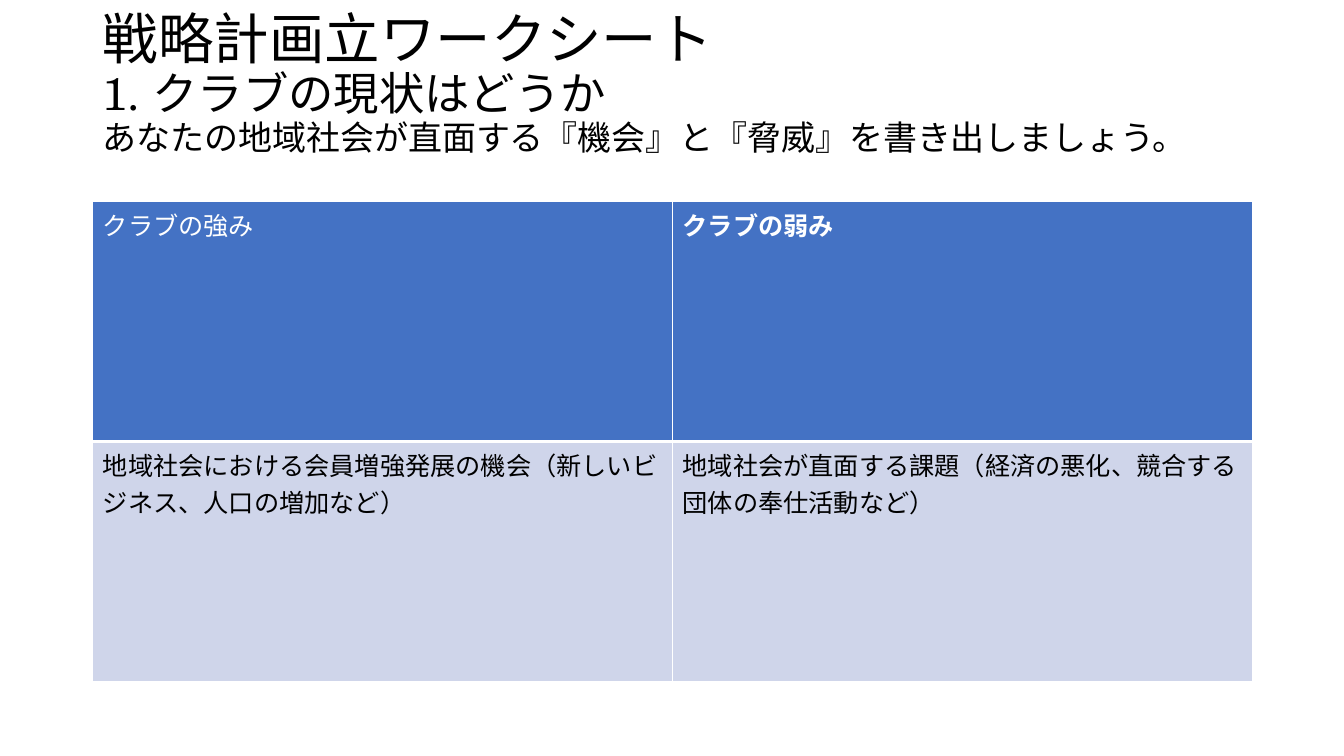
import dataclasses

import lxml.etree
import pptx
import pptx.dml.color
import pptx.enum.text
import pptx.oxml.ns
import pptx.util

COLORS = {"black": "000000", "white": "FFFFFF", "header": "4472C4", "body": "CFD5EA"}
JAPANESE = "Noto Sans CJK JP"
JAPANESE_BOLD = "Noto Sans CJK SC"
SERIF = "TeX Gyre Schola"
Inches = pptx.util.Inches


@dataclasses.dataclass(frozen=True)
class TextRun:
    text: str
    size: float
    font: str = JAPANESE


@dataclasses.dataclass(frozen=True)
class WorksheetCell:
    text: str
    fill: str
    color: str
    font: str = JAPANESE
    bold: bool = False


TITLE_LINES = [
    [TextRun("戦略計画立ワークシート", 39.6)],
    [TextRun("1. ", 32.4, SERIF), TextRun("クラブの現状はどうか", 32.4)],
    [TextRun("あなたの地域社会が直面する『機会』と『脅威』を書き出しましょう。", 24.3)],
]
WORKSHEET = [
    [
        WorksheetCell("クラブの強み", "header", "white"),
        WorksheetCell("クラブの弱み", "header", "white", JAPANESE_BOLD, True),
    ],
    [
        WorksheetCell("地域社会における会員増強発展の機会（新しいビジネス、人口の増加など）", "body", "black"),
        WorksheetCell("地域社会が直面する課題（経済の悪化、競合する団体の奉仕活動など）", "body", "black"),
    ],
]


def add_text(paragraph, text: str, *, size: float, font: str, color: str, bold: bool = False) -> None:
    run = paragraph.add_run()
    run.text = text
    run.font.size = pptx.util.Pt(size)
    run.font.bold = bold
    run.font.color.rgb = pptx.dml.color.RGBColor.from_string(COLORS[color])
    run.font.name = font
    east_asian = lxml.etree.SubElement(run.font._element, pptx.oxml.ns.qn("a:ea"))
    east_asian.set("typeface", font)


def set_borders(cell, widths: dict[str, float]) -> None:
    """Draw white cell borders; widths maps L, R, T, B to points."""
    properties = cell._tc.get_or_add_tcPr()
    for side, width in widths.items():
        line = lxml.etree.SubElement(properties, pptx.oxml.ns.qn(f"a:ln{side}"))
        line.set("w", str(pptx.util.Pt(width)))
        fill = lxml.etree.SubElement(line, pptx.oxml.ns.qn("a:solidFill"))
        color = lxml.etree.SubElement(fill, pptx.oxml.ns.qn("a:srgbClr"))
        color.set("val", COLORS["white"])


def format_title(title) -> None:
    title.left, title.top = Inches(0.92), Inches(0.4)
    title.width, title.height = Inches(11.5), Inches(1.45)
    frame = title.text_frame
    frame.word_wrap = True
    frame.auto_size = pptx.enum.text.MSO_AUTO_SIZE.NONE
    frame.vertical_anchor = pptx.enum.text.MSO_ANCHOR.MIDDLE
    frame.margin_top, frame.margin_bottom = Inches(0.05), Inches(0.62)
    for index, line in enumerate(TITLE_LINES):
        paragraph = frame.add_paragraph() if index else frame.paragraphs[0]
        paragraph.alignment = pptx.enum.text.PP_ALIGN.LEFT
        paragraph.line_spacing = 0.9
        paragraph.space_before = pptx.util.Pt(0)
        for run in line:
            add_text(paragraph, run.text, size=run.size, font=run.font, color="black")


def add_worksheet(slide) -> None:
    table = slide.shapes.add_table(
        len(WORKSHEET), len(WORKSHEET[0]), Inches(0.92), Inches(2), Inches(11.5), Inches(4.76)
    ).table
    for row_index, row in enumerate(WORKSHEET):
        for column_index, content in enumerate(row):
            cell = table.cell(row_index, column_index)
            top, bottom = (1, 3) if row_index == 0 else (3, 1)
            set_borders(cell, {"L": 1, "R": 1, "T": top, "B": bottom})
            cell.fill.solid()
            cell.fill.fore_color.rgb = pptx.dml.color.RGBColor.from_string(COLORS[content.fill])
            add_text(
                cell.text_frame.paragraphs[0], content.text,
                size=18, font=content.font, color=content.color, bold=content.bold,
            )


def main() -> None:
    presentation = pptx.Presentation()
    presentation.slide_width, presentation.slide_height = Inches(13.33), Inches(7.5)
    slide = presentation.slides.add_slide(presentation.slide_layouts[5])
    format_title(slide.shapes.title)
    add_worksheet(slide)
    presentation.save("out.pptx")


if __name__ == "__main__":
    main()
